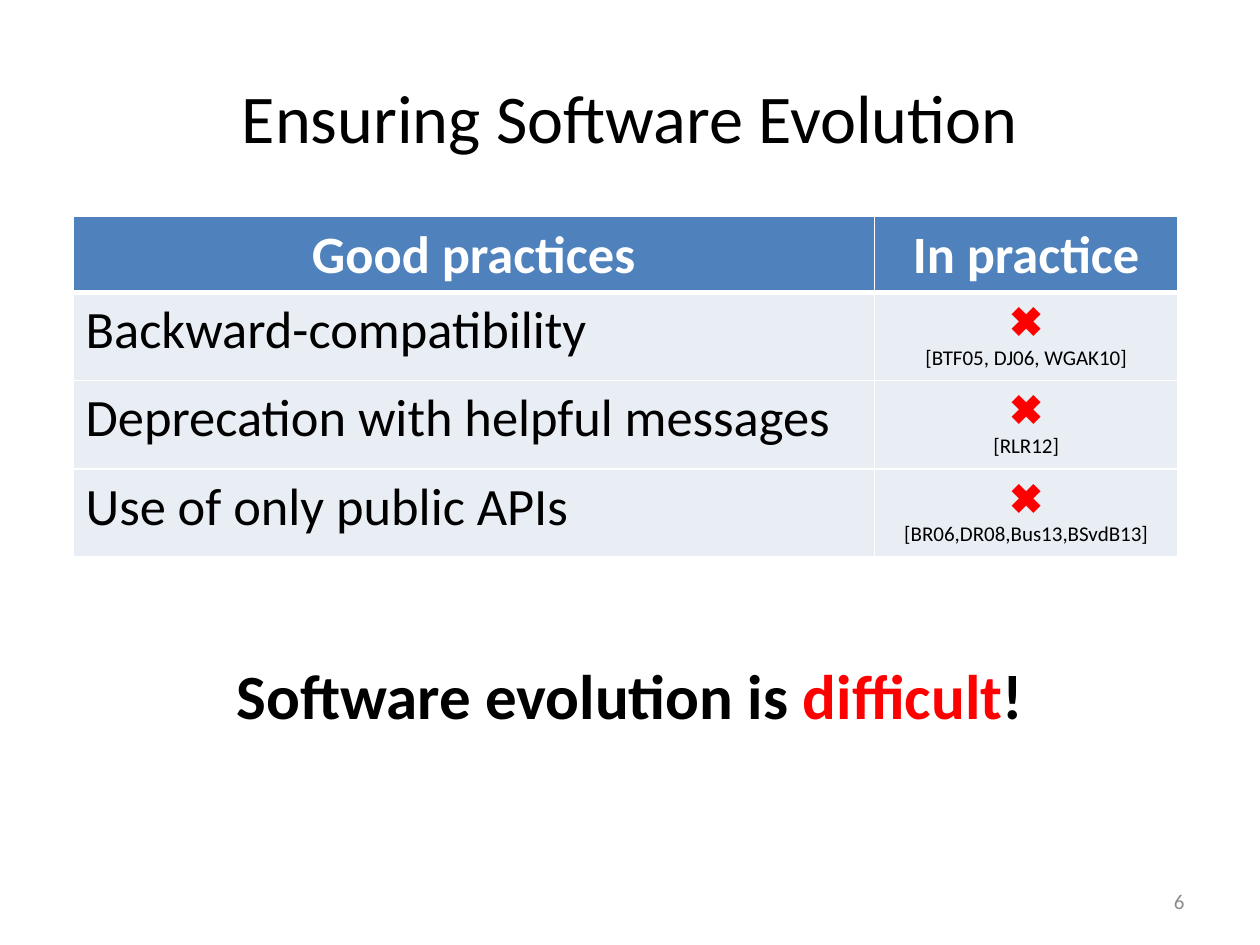
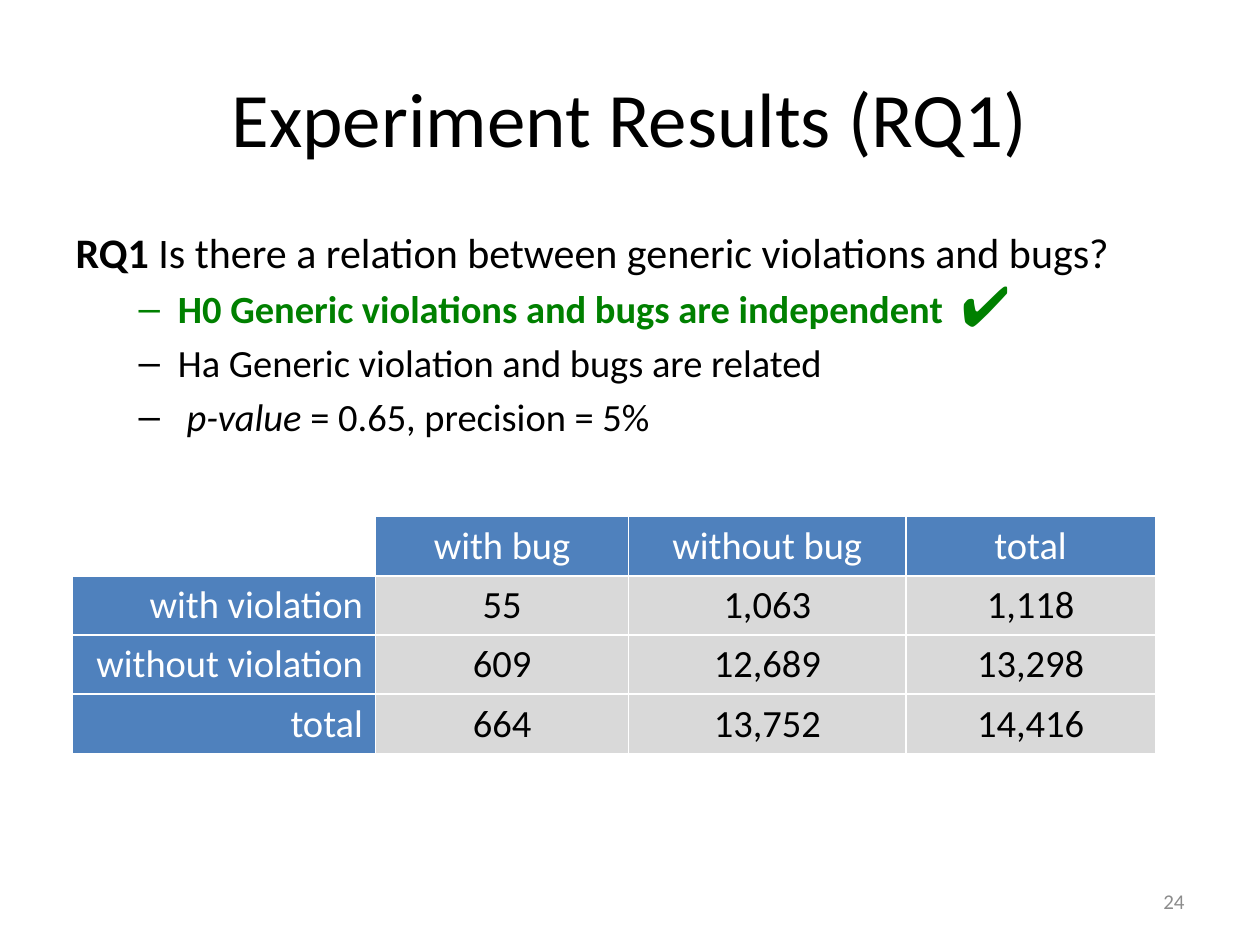
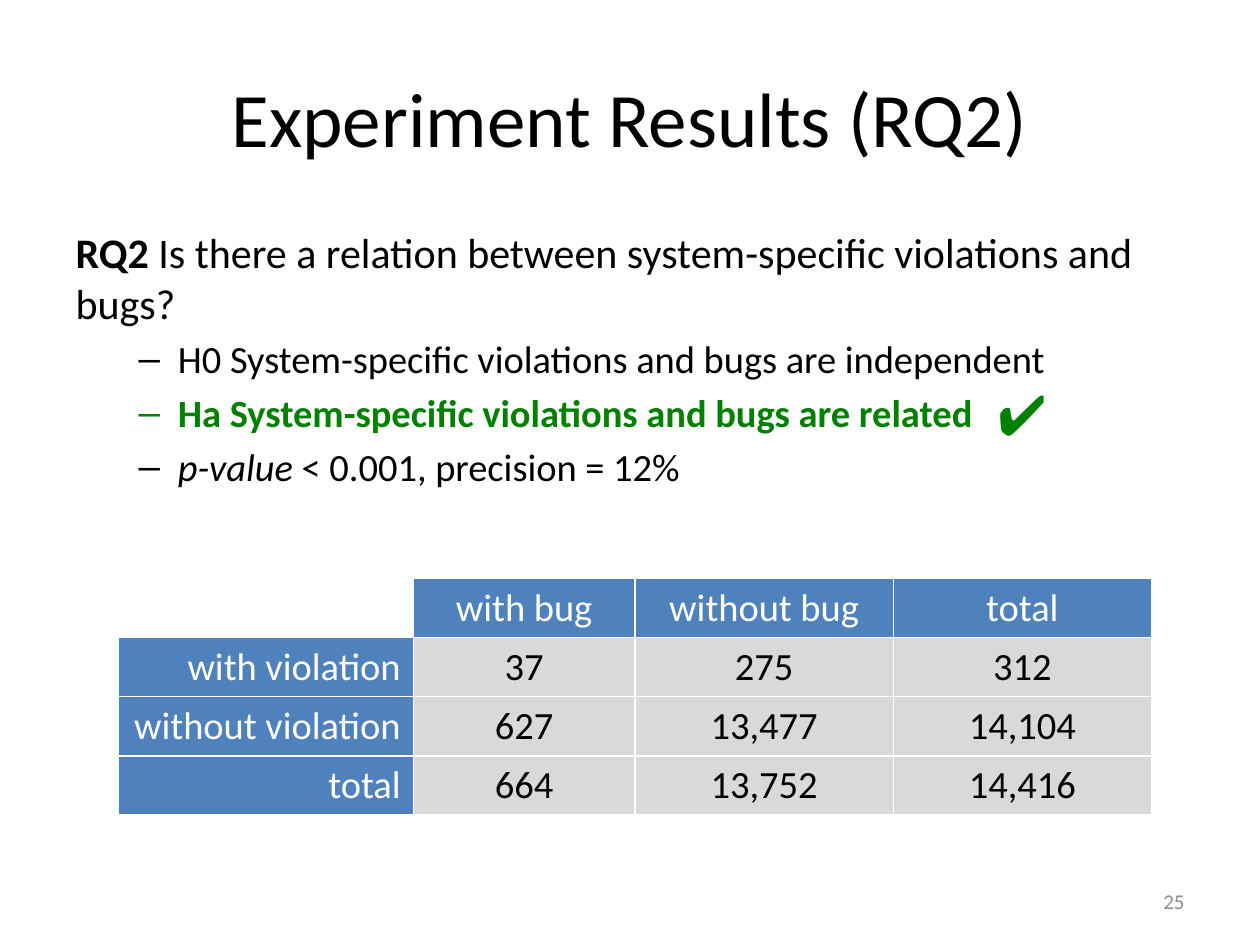
from dataclasses import dataclass, replace
from typing import Optional

from lxml import etree
from pptx import Presentation
from pptx import util as u
from pptx.dml.color import RGBColor
from pptx.enum import text as t
from pptx.oxml import ns

Inches = u.Inches
LEFT, CENTER, RIGHT = t.PP_ALIGN.LEFT, t.PP_ALIGN.CENTER, t.PP_ALIGN.RIGHT


@dataclass(frozen=True)
class Theme:
    font: str = "Calibri"
    symbol_font: str = "Arial"
    black: str = "000000"
    white: str = "FFFFFF"
    red: str = "FF0000"
    green: str = "008000"
    gray: str = "8C8C8C"
    header: str = "4F81BD"
    practice: str = "E9EDF4"
    count: str = "D9D9D9"
    title: int = 44
    long_title: int = 39
    conclusion: int = 36
    practice_text: int = 30
    question: int = 24
    hypothesis: int = 22
    cross: int = 24
    check: int = 32
    small: int = 12


THEME = Theme()


@dataclass(frozen=True)
class Style:
    size: int
    color: str = THEME.black
    bold: bool = False
    italic: bool = False
    name: str = THEME.font


@dataclass(frozen=True)
class Span:
    text: str
    style: Style


@dataclass(frozen=True)
class Line:
    spans: list[Span]
    align: Optional[t.PP_ALIGN] = None
    level: int = 0


@dataclass(frozen=True)
class Cell:
    lines: list[Line]
    fill: Optional[str] = None
    bottom_border: float = 1


@dataclass(frozen=True)
class Grid:
    left: float
    top: float
    columns: list[float]
    rows: list[float]
    cells: list[list[Cell]]


@dataclass(frozen=True)
class Experiment:
    number: int
    page: int
    question: str
    hypotheses: list[str]
    accepted: int
    p_value: str
    result: str
    check_at: tuple[float, float]
    table_at: tuple[float, float]
    columns: list[float]
    counts: list[list[str]]


HYPOTHESIS = Style(THEME.hypothesis)
PRACTICE = Style(THEME.practice_text)
CONCLUSION = Style(THEME.conclusion, bold=True)

PRACTICES = [
    ("Backward-compatibility", "[BTF05, DJ06, WGAK10]"),
    ("Deprecation with helpful messages", "[RLR12]"),
    ("Use of only public APIs", "[BR06,DR08,Bus13,BSvdB13]"),
]

EXPERIMENTS = [
    Experiment(
        1, 24, "Is there a relation between generic violations and bugs?",
        ["H0 Generic violations and bugs are independent",
         "Ha Generic violation and bugs are related"],
        0, " p-value ", "= 0.65, precision = 5%",
        (7.53, 2.1), (0.57, 4.1), [2.41, 2.01, 2.2, 1.98],
        [["55", "1,063", "1,118"],
         ["609", "12,689", "13,298"],
         ["664", "13,752", "14,416"]],
    ),
    Experiment(
        2, 25, "Is there a relation between system-specific violations and bugs?",
        ["H0 System-specific violations and bugs are independent",
         "Ha System-specific violations and bugs are related"],
        1, "p-value ", "< 0.001, precision = 12%",
        (7.82, 2.96), (0.94, 4.59), [2.34, 1.76, 2.05, 2.05],
        [["37", "275", "312"],
         ["627", "13,477", "14,104"],
         ["664", "13,752", "14,416"]],
    ),
]


def line(content: str, style: Style, align=None, level: int = 0) -> Line:
    return Line([Span(content, style)], align, level)


def apply_style(font, style: Style) -> None:
    font.name = style.name
    font.size = u.Pt(style.size)
    font.bold = style.bold
    font.italic = style.italic
    font.color.rgb = RGBColor.from_string(style.color)


def write(frame, lines: list[Line]) -> None:
    for index, item in enumerate(lines):
        paragraph = frame.add_paragraph() if index else frame.paragraphs[0]
        paragraph.level = item.level
        paragraph.alignment = item.align
        if len({span.style for span in item.spans}) == 1:
            apply_style(paragraph.font, item.spans[0].style)
        for span in item.spans:
            run = paragraph.add_run()
            run.text = span.text
            apply_style(run.font, span.style)


def remove_bullet(paragraph) -> None:
    properties = paragraph._p.get_or_add_pPr()
    properties.set("marL", "0")
    properties.set("indent", "0")
    properties.insert(0, etree.Element(ns.qn("a:buNone")))


def add_text(slide, left: float, top: float, width: float, height: float,
             item: Line, wrap: bool = True):
    shape = slide.shapes.add_textbox(
        Inches(left), Inches(top), Inches(width), Inches(height))
    shape.text_frame.word_wrap = wrap
    write(shape.text_frame, [item])
    return shape


def add_slide(presentation, title: str, title_size: int, page: int,
              body_lines: list[Line], body_top: float):
    slide = presentation.slides.add_slide(presentation.slide_layouts[1])
    heading, body = slide.placeholders
    for shape, top, height in ((heading, 0.3, 1.25), (body, body_top, 4.95)):
        shape.left, shape.top = Inches(0.5), Inches(top)
        shape.width, shape.height = Inches(9), Inches(height)
        shape.text_frame.auto_size = t.MSO_AUTO_SIZE.NONE
    heading.text_frame.vertical_anchor = t.MSO_ANCHOR.MIDDLE
    write(heading.text_frame, [line(title, Style(title_size), CENTER)])
    write(body.text_frame, body_lines)
    remove_bullet(body.text_frame.paragraphs[0])
    number = add_text(slide, 7.17, 6.95, 2.33, 0.4,
                      line(str(page), Style(THEME.small, THEME.gray), RIGHT))
    number.text_frame.vertical_anchor = t.MSO_ANCHOR.MIDDLE
    return slide


def set_borders(cell, bottom: float) -> None:
    properties = cell._tc.get_or_add_tcPr()
    widths = {"lnL": 1, "lnR": 1, "lnT": 1, "lnB": bottom}
    for index, (side, width) in enumerate(widths.items()):
        border = etree.Element(ns.qn(f"a:{side}"), w=str(u.Pt(width)))
        fill = etree.SubElement(border, ns.qn("a:solidFill"))
        etree.SubElement(fill, ns.qn("a:srgbClr"), val=THEME.white)
        properties.insert(index, border)


def add_grid(slide, grid: Grid) -> None:
    table = slide.shapes.add_table(
        len(grid.rows), len(grid.columns), Inches(grid.left), Inches(grid.top),
        Inches(sum(grid.columns)), Inches(sum(grid.rows))).table
    table.first_row = table.horz_banding = False
    for column, width in zip(table.columns, grid.columns):
        column.width = Inches(width)
    for row, height, items in zip(table.rows, grid.rows, grid.cells):
        row.height = Inches(height)
        for cell, item in zip(row.cells, items):
            write(cell.text_frame, item.lines)
            if item.fill:
                cell.fill.solid()
                cell.fill.fore_color.rgb = RGBColor.from_string(item.fill)
            else:
                cell.fill.background()
            set_borders(cell, item.bottom_border)


def add_practices(presentation) -> None:
    conclusion = Line([
        Span("Software evolution is ", CONCLUSION),
        Span("difficult", replace(CONCLUSION, color=THEME.red)),
        Span("!", CONCLUSION),
    ], CENTER)
    slide = add_slide(presentation, "Ensuring Software Evolution",
                      THEME.long_title, 6, [conclusion], 1.71)
    slide.placeholders[1].text_frame.margin_top = Inches(3.5)
    heading = replace(PRACTICE, color=THEME.white, bold=True)
    cross = Style(THEME.cross, THEME.red, True, name=THEME.symbol_font)
    cells = [[Cell([line(label, heading, CENTER)], THEME.header, 3)
              for label in ("Good practices", "In practice")]]
    for practice, references in PRACTICES:
        cells.append([
            Cell([line(practice, PRACTICE, LEFT)], THEME.practice),
            Cell([line("✖", cross, CENTER),
                  line(references, Style(THEME.small), CENTER)], THEME.practice),
        ])
    rows = [0.6] + [0.67] * len(PRACTICES)
    add_grid(slide, Grid(0.58, 1.72, [6.36, 2.41], rows, cells))


def count_cells(counts: list[list[str]]) -> list[list[Cell]]:
    heading = replace(HYPOTHESIS, color=THEME.white)
    cells = [[Cell([])] + [Cell([line(label, heading, CENTER)], THEME.header)
                           for label in ("with bug", "without bug", "total")]]
    for label, values in zip(("with violation", "without violation", "total"), counts):
        cells.append([Cell([line(label, heading, RIGHT)], THEME.header)] + [
            Cell([line(value, HYPOTHESIS, CENTER)], THEME.count) for value in values])
    return cells


def add_experiment(presentation, experiment: Experiment) -> None:
    name = f"RQ{experiment.number}"
    question = Style(THEME.question)
    accepted = replace(HYPOTHESIS, color=THEME.green, bold=True)
    lines = [Line([Span(name, replace(question, bold=True)),
                   Span(f" {experiment.question}", question)])]
    for index, hypothesis in enumerate(experiment.hypotheses):
        style = accepted if index == experiment.accepted else HYPOTHESIS
        lines.append(line(hypothesis, style, level=1))
    lines.append(Line([Span(experiment.p_value, replace(HYPOTHESIS, italic=True)),
                       Span(experiment.result, HYPOTHESIS)], level=1))
    slide = add_slide(presentation, f"Experiment Results ({name})",
                      THEME.title, experiment.page, lines, 1.75)
    add_grid(slide, Grid(*experiment.table_at, experiment.columns,
                         [0.47] * 4, count_cells(experiment.counts)))
    check = Style(THEME.check, THEME.green, name=THEME.symbol_font)
    add_text(slide, *experiment.check_at, 0.58, 0.64, line("✔", check), wrap=False)


def main() -> None:
    presentation = Presentation()
    presentation.slide_width, presentation.slide_height = Inches(10), Inches(7.5)
    add_practices(presentation)
    for experiment in EXPERIMENTS:
        add_experiment(presentation, experiment)
    presentation.save("out.pptx")


if __name__ == "__main__":
    main()
